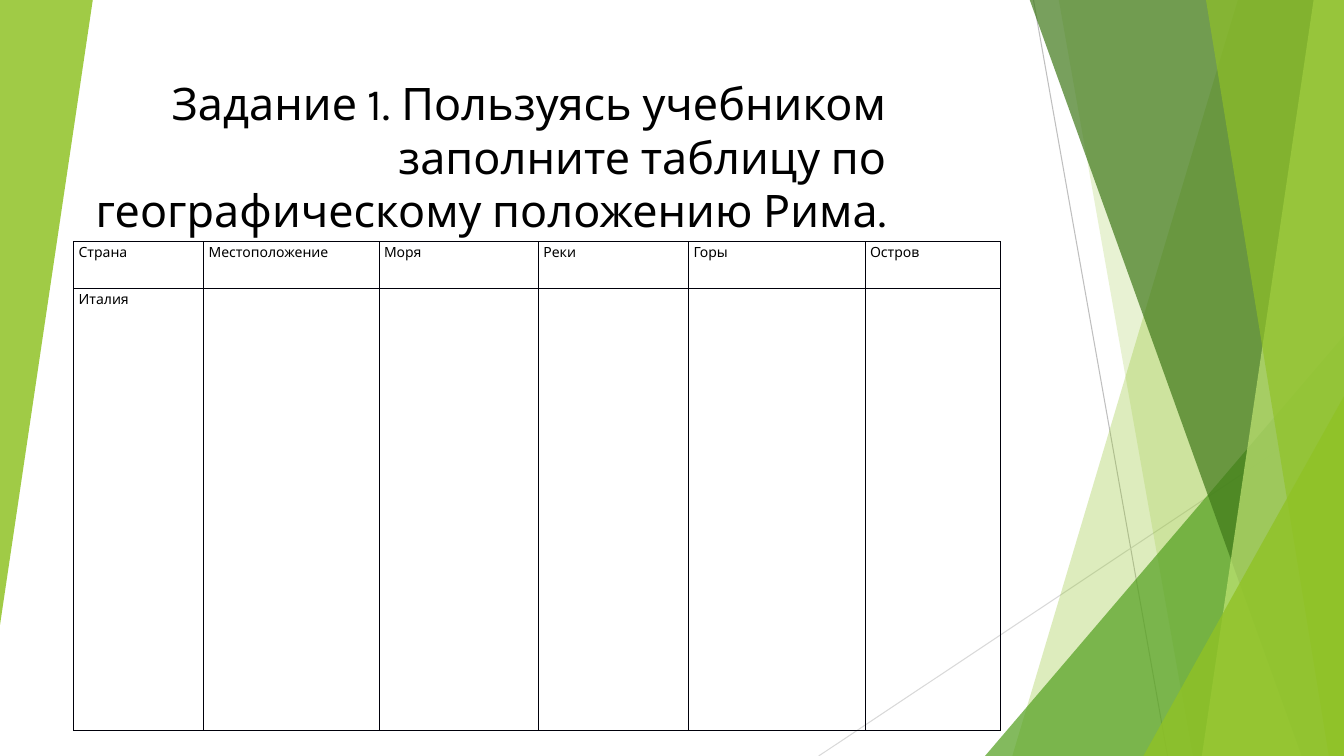
from lxml.etree import SubElement
from pptx import Presentation
from pptx.dml.color import RGBColor
from pptx.enum.shapes import MSO_CONNECTOR as CONNECTOR, MSO_SHAPE as SHAPE
from pptx.enum.text import MSO_ANCHOR as ANCHOR, PP_ALIGN as ALIGN
from pptx.oxml.ns import qn
from pptx.util import Inches, Pt

TITLE = ("Задание 1. Пользуясь учебником заполните таблицу "
         "по географическому положению Рима.")
HEADERS = ["Страна", "Местоположение", "Моря", "Реки", "Горы", "Остров"]
COUNTRY_ROW = ["Италия"] + [""] * 5
COLUMN_WIDTHS = [1.29, 1.74, 1.58, 1.49, 1.75, 1.34]
ROW_HEIGHTS = [0.46, 4.39]
TABLE_LEFT, TABLE_TOP = 0.73, 2.4

WIDTH, HEIGHT = 13.33, 7.5
TOP = -0.01
# start, end, colour
RAYS = [((10.25, 0), (11.58, HEIGHT), "BFBFBF"),
        ((WIDTH, 4.03), (8.12, HEIGHT), "D9D9D9")]
# Facets reach the right edge: ("band", top x, bottom x, colour, opacity %)
# or ("corner", left, top, colour, opacity %)
FACETS = [
    ("band", 12.28, 10.04, "90C226", 30),
    ("band", 10.5, 11.83, "90C226", 20),
    ("corner", 9.77, 3.33, "54A021", 72),
    ("band", 10.21, 12.91, "3F7819", 70),
    ("band", 13.03, 11.92, "C0E474", 70),
    ("band", 11.96, 13.18, "90C226", 65),
    ("corner", 11.34, 3.93, "90C226", 80),
]


def rgb(colour):
    return RGBColor.from_string(colour)


def paint(shape, colour, opacity):
    shape.shadow.inherit = False
    shape.line.fill.background()
    shape.fill.solid()
    shape.fill.fore_color.rgb = rgb(colour)
    solid = shape.fill._xPr.find(qn("a:solidFill"))
    SubElement(solid[0], qn("a:alpha"), val=str(opacity * 1000))


def add_ray(shapes, start, end, colour):
    ray = shapes.add_connector(CONNECTOR.STRAIGHT, *map(Inches, start + end))
    ray.line.color.rgb = rgb(colour)
    ray.line.width = Pt(0.75)
    SubElement(ray._element.spPr, qn("a:effectLst"))


def add_band(shapes, top_x, bottom_x, colour, opacity):
    corners = [(top_x, TOP), (WIDTH, TOP), (WIDTH, HEIGHT), (bottom_x, HEIGHT)]
    points = [(Inches(x), Inches(y)) for x, y in corners]
    builder = shapes.build_freeform(*points[0])
    builder.add_line_segments(points[1:], close=True)
    paint(builder.convert_to_shape(), colour, opacity)


def add_corner(shapes, left, top, width, height, colour, opacity, rotation=0):
    """Add a right triangle with its upright side on the right."""
    corner = shapes.add_shape(SHAPE.ISOSCELES_TRIANGLE,
                              *map(Inches, (left, top, width, height)))
    corner.adjustments[0] = 1
    corner.rotation = rotation
    paint(corner, colour, opacity)


def write(frame, text, size, align, font="Karla", colour="000000"):
    paragraph = frame.paragraphs[0]
    paragraph.alignment = align
    paragraph.font.size = Pt(size)
    if text:
        run = paragraph.add_run()
        run.text = text
        run.font.size = Pt(size)
        run.font.name = font
        run.font.color.rgb = rgb(colour)


def add_borders(cell, colour="00000A", points=0.75):
    properties = cell._tc.get_or_add_tcPr()
    for side in ("lnL", "lnR", "lnT", "lnB"):
        border = SubElement(properties, qn(f"a:{side}"), w=str(Pt(points)))
        solid = SubElement(border, qn("a:solidFill"))
        SubElement(solid, qn("a:srgbClr"), val=colour)


def add_task_table(shapes):
    table = shapes.add_table(
        len(ROW_HEIGHTS), len(HEADERS), Inches(TABLE_LEFT), Inches(TABLE_TOP),
        Inches(sum(COLUMN_WIDTHS)), Inches(sum(ROW_HEIGHTS))).table
    table.first_row = table.horz_banding = False
    for column, width in zip(table.columns, COLUMN_WIDTHS):
        column.width = Inches(width)
    for row, height, texts in zip(table.rows, ROW_HEIGHTS,
                                  [HEADERS, COUNTRY_ROW]):
        row.height = Inches(height)
        for cell, text in zip(row.cells, texts):
            cell.margin_left = cell.margin_right = Inches(0.05)
            cell.margin_top = cell.margin_bottom = Inches(0.03)
            add_borders(cell)
            cell.fill.background()
            write(cell.text_frame, text, size=10, align=ALIGN.JUSTIFY)


def main():
    deck = Presentation()
    deck.slide_width, deck.slide_height = Inches(WIDTH), Inches(HEIGHT)
    shapes = deck.slides.add_slide(deck.slide_layouts[6]).shapes

    for ray in RAYS:
        add_ray(shapes, *ray)
    for kind, first, second, colour, opacity in FACETS:
        if kind == "band":
            add_band(shapes, first, second, colour, opacity)
        else:
            add_corner(shapes, first, second, WIDTH - first, HEIGHT - second,
                       colour, opacity)
    add_corner(shapes, 0, 0, 0.92, 6.2, "90C226", 85, rotation=180)

    title = shapes.add_textbox(*map(Inches, (0.4, 0.6, 8.49, 1.8))).text_frame
    title.word_wrap = True
    title.vertical_anchor = ANCHOR.BOTTOM
    write(title, TITLE, size=32, align=ALIGN.RIGHT)

    add_task_table(shapes)
    deck.save("out.pptx")


if __name__ == "__main__":
    main()
